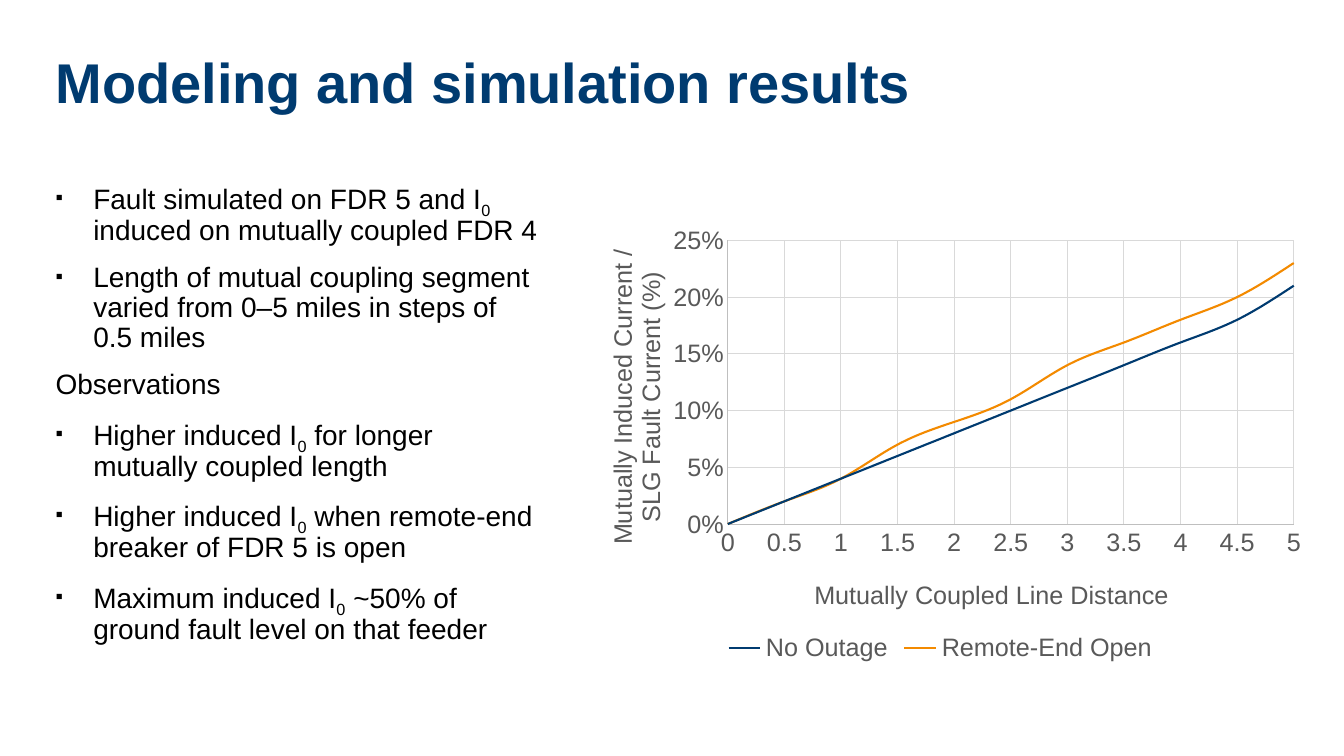
"""Build a slide with simulation findings beside a scatter chart of induced current."""
from dataclasses import dataclass

from pptx import Presentation
from pptx.chart.axis import ValueAxis
from pptx.chart.chart import Chart
from pptx.chart.data import XyChartData
from pptx.dml.color import RGBColor
from pptx.enum.chart import XL_CHART_TYPE, XL_LEGEND_POSITION, XL_MARKER_STYLE, XL_TICK_MARK
from pptx.enum.text import MSO_ANCHOR, MSO_AUTO_SIZE, PP_ALIGN
from pptx.oxml import parse_xml
from pptx.oxml.ns import nsdecls
from pptx.oxml.xmlchemy import BaseOxmlElement
from pptx.slide import Slide
from pptx.text.text import Font, TextFrame
from pptx.util import Cm, Pt

SCATTER = XL_CHART_TYPE.XY_SCATTER_SMOOTH_NO_MARKERS
LEGEND_BOTTOM = XL_LEGEND_POSITION.BOTTOM
NO_MARKER = XL_MARKER_STYLE.NONE
NO_TICK = XL_TICK_MARK.NONE
TOP = MSO_ANCHOR.TOP
NO_AUTOSIZE = MSO_AUTO_SIZE.NONE
LEFT = PP_ALIGN.LEFT

COLORS = {
    "navy": "003B70",
    "orange": "F38A00",
    "black": "000000",
    "label": "595959",
    "axis": "BFBFBF",
    "grid": "D9D9D9",
}
FONT_NAME = "Arial"


@dataclass
class Finding:
    """A body paragraph; text between underscores is subscript."""

    text: str
    bulleted: bool = True


@dataclass
class Curve:
    """A chart series given in whole percent."""

    name: str
    color: str
    percents: list[int]


@dataclass
class AxisStyle:
    """The title, range and number format of one axis."""

    title: str
    maximum: float
    step: float
    number_format: str


FINDINGS = [
    Finding("Fault simulated on FDR 5 and I_0_ induced on mutually coupled FDR 4"),
    Finding("Length of mutual coupling segment varied from 0–5 miles in steps of \v0.5 miles"),
    Finding("Observations", bulleted=False),
    Finding("Higher induced I_0_ for longer mutually coupled length"),
    Finding("Higher induced I_0_ when remote-end breaker of FDR 5 is open"),
    Finding("Maximum induced I_0_ ~50% of ground fault level on that feeder"),
]
CURVES = [
    Curve("No Outage", "navy", [0, 2, 4, 6, 8, 10, 12, 14, 16, 18, 21]),
    Curve("Remote-End Open", "orange", [0, 2, 4, 7, 9, 11, 14, 16, 18, 20, 23]),
]
MILE_STEP = 0.5
DISTANCE_AXIS = AxisStyle("Mutually Coupled Line Distance", 5, MILE_STEP, "General")
CURRENT_AXIS = AxisStyle("Mutually Induced Current / SLG Fault Current (%)", 0.25, 0.05, "0%")


def style_font(font: Font, size: int, color: str, bold: bool = False) -> None:
    """Apply the deck font with a size and colour."""
    font.name = FONT_NAME
    font.size = Pt(size)
    font.bold = bold
    font.color.rgb = RGBColor.from_string(COLORS[color])


def prepare_frame(frame: TextFrame) -> None:
    """Set margins, wrapping and anchoring of a placeholder."""
    frame.margin_left = frame.margin_right = frame.margin_top = frame.margin_bottom = Cm(0.13)
    frame.word_wrap = True
    frame.auto_size = NO_AUTOSIZE
    frame.vertical_anchor = TOP


def add_title(slide: Slide) -> None:
    """Fill the title placeholder."""
    box = slide.shapes.title
    box.left, box.top, box.width, box.height = Cm(1.27), Cm(1.27), Cm(31.32), Cm(3.18)
    prepare_frame(box.text_frame)
    box.text_frame.text = "Modeling and simulation results"
    para = box.text_frame.paragraphs[0]
    para.alignment = LEFT
    para.line_spacing = 0.9
    style_font(para.runs[0].font, 40, "navy", bold=True)


def add_findings(slide: Slide) -> None:
    """Fill the body placeholder with the findings."""
    box = slide.placeholders[1]
    box.left, box.top, box.width, box.height = Cm(1.27), Cm(4.45), Cm(12.57), Cm(13.34)
    frame = box.text_frame
    prepare_frame(frame)
    for index, finding in enumerate(FINDINGS):
        para = frame.add_paragraph() if index else frame.paragraphs[0]
        para.alignment = LEFT
        para.line_spacing = 0.9
        para.space_before, para.space_after = Pt(0), Pt(12)
        parts = finding.text.split("_")
        para.text = parts[0]
        for part in parts[1:]:
            para.add_run().text = part
        for position, span in enumerate(para.runs):
            style_font(span.font, 20, "black")
            if len(parts) > 1 and position % 2:
                span.font._element.set("baseline", "-25000")
        properties = para._p.get_or_add_pPr()
        indent = Cm(0.95) if finding.bulleted else 0
        properties.set("marL", str(indent))
        properties.set("indent", str(-indent))
        if finding.bulleted:
            bullet = [
                f'<a:buClr {nsdecls("a")}><a:srgbClr val="{COLORS["black"]}"/></a:buClr>',
                f'<a:buSzPct {nsdecls("a")} val="75000"/>',
                f'<a:buFont {nsdecls("a")} typeface="{FONT_NAME}"/>',
                f'<a:buChar {nsdecls("a")} char="▪"/>',
            ]
        else:
            bullet = [f'<a:buNone {nsdecls("a")}/>']
        for markup in bullet:
            properties.append(parse_xml(markup))


def place_part(part: BaseOxmlElement, index: int, **fractions: float) -> None:
    """Give a chart part a manual layout in fractions of the chart."""
    for layout in part.xpath("c:layout"):
        part.remove(layout)
    target = '<c:layoutTarget val="inner"/>' if "w" in fractions else ""
    modes = "".join(f'<c:{key}Mode val="edge"/>' for key in fractions if key in "xy")
    values = "".join(f'<c:{key} val="{value}"/>' for key, value in fractions.items())
    part.insert(index, parse_xml(
        f'<c:layout {nsdecls("c")}><c:manualLayout>{target}{modes}{values}'
        "</c:manualLayout></c:layout>"))


def style_axis(axis: ValueAxis, style: AxisStyle) -> None:
    """Format an axis with its title, labels and gridlines."""
    axis.minimum_scale, axis.maximum_scale = 0, style.maximum
    axis.major_unit = style.step
    axis.major_tick_mark = axis.minor_tick_mark = NO_TICK
    axis.has_major_gridlines = True
    for line, color in ((axis.format.line, "axis"), (axis.major_gridlines.format.line, "grid")):
        line.color.rgb = RGBColor.from_string(COLORS[color])
        line.width = Pt(0.75)
    axis.tick_labels.number_format = style.number_format
    axis.tick_labels.number_format_is_linked = False
    style_font(axis.tick_labels.font, 18, "label")
    frame = axis.axis_title.text_frame
    frame.text = style.title
    style_font(frame.paragraphs[0].runs[0].font, 18, "label")


def style_curves(chart: Chart) -> None:
    """Draw each series as a smooth line without markers."""
    chart.plots[0].vary_by_categories = False
    for series, curve in zip(chart.plots[0].series, CURVES):
        series.format.line.color.rgb = RGBColor.from_string(COLORS[curve.color])
        series.format.line.width = Pt(1.5)
        series.marker.style = NO_MARKER
        series._element.get_or_add_smooth().val = True


def add_current_chart(slide: Slide) -> None:
    """Add the chart of induced current against coupled distance."""
    data = XyChartData()
    for curve in CURVES:
        points = data.add_series(curve.name)
        for step, percent in enumerate(curve.percents):
            points.add_data_point(step * MILE_STEP, percent / 100)
    chart = slide.shapes.add_chart(
        SCATTER, Cm(14.4), Cm(5.49), Cm(18.77), Cm(11.35), data).chart
    chart.has_title = False
    style_font(chart.font, 10, "black")
    style_curves(chart)
    style_axis(chart.category_axis, DISTANCE_AXIS)
    style_axis(chart.value_axis, CURRENT_AXIS)
    turned = chart.value_axis.axis_title.text_frame._txBody.bodyPr
    turned.set("rot", "-5400000")
    turned.set("vert", "horz")
    chart.has_legend = True
    chart.legend.position = LEGEND_BOTTOM
    chart.legend.include_in_layout = False
    style_font(chart.legend.font, 18, "label")
    place_part(chart._chartSpace.xpath(".//c:plotArea")[0], 0, x=0.21, y=0.05, w=0.76, h=0.63)
    place_part(chart.category_axis.axis_title._element, 1, x=0.32, y=0.79)
    place_part(chart.value_axis.axis_title._element, 1, x=0.04, y=0.06)
    place_part(chart.legend._element, 1, x=0.2, y=0.92)


def main() -> None:
    """Build and save the deck."""
    deck = Presentation()
    deck.slide_width, deck.slide_height = Cm(33.87), Cm(19.05)
    page = deck.slides.add_slide(deck.slide_layouts[1])
    add_title(page)
    add_findings(page)
    add_current_chart(page)
    deck.save("out.pptx")


if __name__ == "__main__":
    main()
